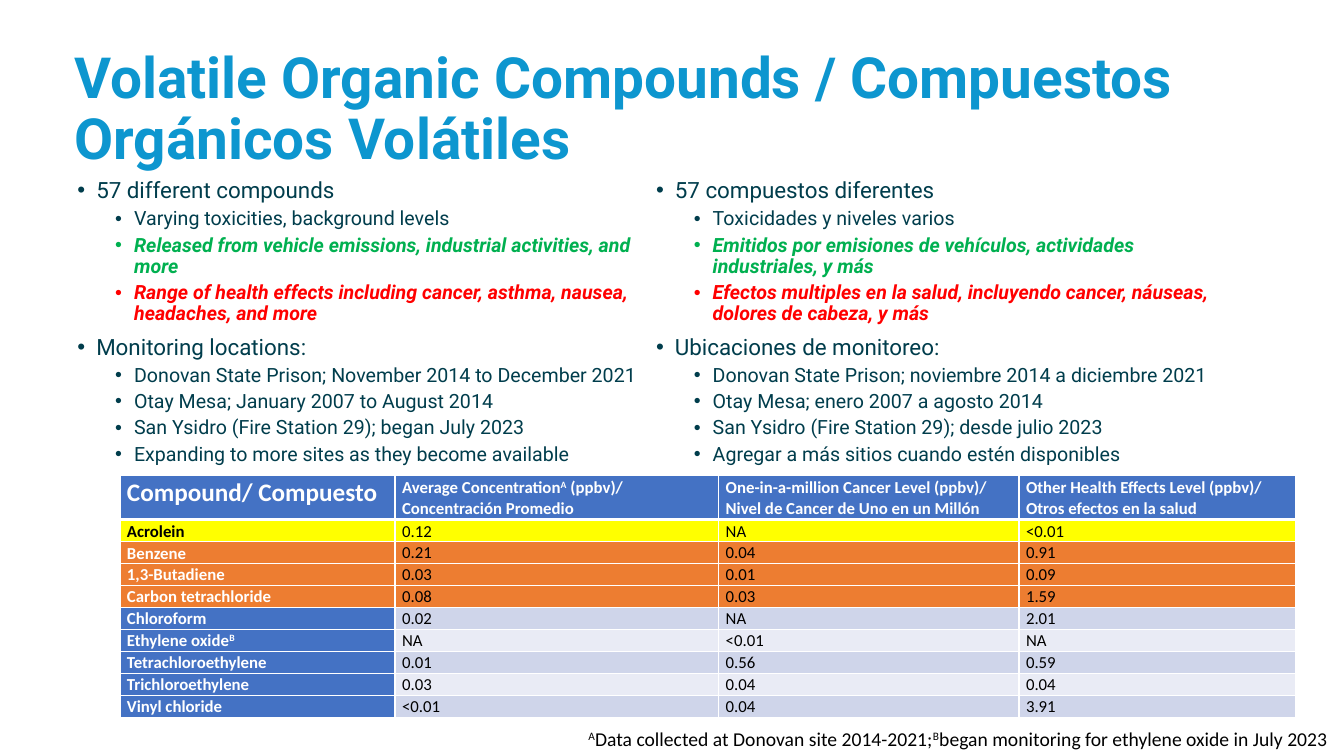
import pptx
import pptx.util
import pptx.dml.color
import pptx.enum.text
import pptx.oxml
import pptx.oxml.ns

Pt = pptx.util.Pt
ANCHOR = pptx.enum.text.MSO_ANCHOR

TITLE = "Volatile Organic Compounds / Compuestos Orgánicos Volátiles"
ENGLISH = [
    ("topic", "57 different compounds"),
    ("detail", "Varying toxicities, background levels"),
    ("source", "Released from vehicle emissions, industrial activities, and more"),
    ("health", "Range of health effects including cancer, asthma, nausea, headaches, and more"),
    ("topic", "Monitoring locations:"),
    ("detail", "Donovan State Prison; November 2014 to December 2021"),
    ("detail", "Otay Mesa; January 2007 to August 2014"),
    ("detail", "San Ysidro (Fire Station 29); began July 2023"),
    ("detail", "Expanding to more sites as they become available"),
]
SPANISH = [
    ("topic", "57 compuestos diferentes"),
    ("detail", "Toxicidades y niveles varios"),
    ("source", "Emitidos por emisiones de vehículos, actividades industriales, y más"),
    ("health", "Efectos multiples en la salud, incluyendo cancer, náuseas, dolores de cabeza, y más"),
    ("topic", "Ubicaciones de monitoreo:"),
    ("detail", "Donovan State Prison; noviembre 2014 a diciembre 2021"),
    ("detail", "Otay Mesa; enero 2007 a agosto 2014"),
    ("detail", "San Ysidro (Fire Station 29); desde julio 2023"),
    ("detail", "Agregar a más sitios cuando estén disponibles"),
]
HEADINGS = [
    ["Compound/ Compuesto"],
    ["Average Concentration^A^ (ppbv)/ Concentración Promedio"],
    ["One-in-a-million Cancer Level (ppbv)/", "Nivel de Cancer de Uno en un Millón"],
    ["Other Health Effects Level (ppbv)/", "Otros efectos en la salud"],
]
COMPOUNDS = [
    ("Acrolein", "0.12", "NA", "<0.01"),
    ("Benzene", "0.21", "0.04", "0.91"),
    ("1,3-Butadiene", "0.03", "0.01", "0.09"),
    ("Carbon tetrachloride", "0.08", "0.03", "1.59"),
    ("Chloroform", "0.02", "NA", "2.01"),
    ("Ethylene oxide^B^", "NA", "<0.01", "NA"),
    ("Tetrachloroethylene", "0.01", "0.56", "0.59"),
    ("Trichloroethylene", "0.03", "0.04", "0.04"),
    ("Vinyl chloride", "<0.01", "0.04", "3.91"),
]
HIGHLIGHTS = {"Acrolein": "yellow", "Benzene": "orange", "1,3-Butadiene": "orange",
              "Carbon tetrachloride": "orange"}
FOOTNOTE = "^A^Data collected at Donovan site 2014-2021;^B^began monitoring for ethylene oxide in July 2023"

THEME = {
    "sans": "Roboto", "table_font": "Calibri",
    "title": "0D96CF", "body": "003D4C", "green": "00B050", "red": "FF0000",
    "blue": "4472C4", "yellow": "FFFF00", "orange": "ED7D31",
    "bands": ("CFD5EA", "E9EBF5"), "white": "FFFFFF", "black": "000000",
    "title_size": 40.5, "topic_size": 16, "detail_size": 14,
    "corner_size": 18, "cell_size": 12, "note_size": 14,
}
DETAIL = dict(size=THEME["detail_size"], color=THEME["body"], indent=40.5, before=3.75)
LEVELS = {
    "topic": dict(size=THEME["topic_size"], color=THEME["body"], indent=13.5, before=7.5),
    "detail": DETAIL,
    "source": dict(DETAIL, color=THEME["green"], bold=True, italic=True),
    "health": dict(DETAIL, color=THEME["red"], bold=True, italic=True),
}
HANGING = 13.5
COLUMN_WIDTHS = (196.5, 231.2, 214.5, 197.3)
HEADER_HEIGHT, ROW_HEIGHT = 31.4, 15.7


def write(frame, text, size, color, font=THEME["sans"], bold=False, italic=False,
          spacing=None, before=0, indent=None):
    first = not frame.paragraphs[0].runs
    paragraph = frame.paragraphs[0] if first else frame.add_paragraph()
    if indent is not None:
        properties = paragraph._p.get_or_add_pPr()
        properties.set("marL", str(Pt(indent)))
        properties.set("indent", str(-Pt(HANGING)))
        properties.set("lvl", "1" if indent > HANGING else "0")
        for tag, key, value in (("buFont", "typeface", "Arial"), ("buChar", "char", "•")):
            bullet = pptx.oxml.ns.qn("a:" + tag)
            properties.append(properties.makeelement(bullet, {key: value}))
    if spacing:
        paragraph.line_spacing = spacing
    if before and not first:
        paragraph.space_before = Pt(before)
    for position, part in enumerate(text.split("^")):
        if not part:
            continue
        run = paragraph.add_run()
        run.text = part
        run.font.name = font
        run.font.size = Pt(size)
        run.font.bold = bold
        run.font.italic = italic
        run.font.color.rgb = pptx.dml.color.RGBColor.from_string(color)
        if position % 2:
            run.font._element.set("baseline", "30000")


def text_frame(slide, left, top, width, height, anchor=ANCHOR.TOP):
    frame = slide.shapes.add_textbox(Pt(left), Pt(top), Pt(width), Pt(height)).text_frame
    frame.word_wrap = True
    frame.vertical_anchor = anchor
    return frame


def border(cell, bottom):
    sides = (("lnL", 1), ("lnR", 1), ("lnT", 1), ("lnB", bottom))
    for position, (side, width) in enumerate(sides):
        line = pptx.oxml.parse_xml(
            f'<a:{side} {pptx.oxml.ns.nsdecls("a")} w="{Pt(width)}"><a:solidFill>'
            f'<a:srgbClr val="{THEME["white"]}"/></a:solidFill></a:{side}>')
        cell._tc.get_or_add_tcPr().insert(position, line)


def fill_cell(cell, lines, fill, bottom=1, anchor=ANCHOR.TOP, **style):
    cell.margin_left = cell.margin_right = Pt(5)
    cell.margin_top = cell.margin_bottom = 0
    cell.vertical_anchor = anchor
    cell.fill.solid()
    cell.fill.fore_color.rgb = pptx.dml.color.RGBColor.from_string(fill)
    border(cell, bottom)
    for line in lines:
        write(cell.text_frame, line, font=THEME["table_font"], spacing=1.07, **style)


def add_compound_table(slide):
    height = HEADER_HEIGHT + ROW_HEIGHT * len(COMPOUNDS)
    table = slide.shapes.add_table(len(COMPOUNDS) + 1, len(HEADINGS), Pt(85.7), Pt(339.8),
                                   Pt(sum(COLUMN_WIDTHS)), Pt(height)).table
    for column, width in zip(table.columns, COLUMN_WIDTHS):
        column.width = Pt(width)
    for row in table.rows:
        row.height = Pt(ROW_HEIGHT)
    table.rows[0].height = Pt(HEADER_HEIGHT)
    for column, heading in enumerate(HEADINGS):
        size = THEME["cell_size"] if column else THEME["corner_size"]
        fill_cell(table.cell(0, column), heading, THEME["blue"], bottom=3,
                  size=size, color=THEME["white"], bold=True)
    for row, compound in enumerate(COMPOUNDS):
        highlight = HIGHLIGHTS.get(compound[0])
        for column, value in enumerate(compound):
            is_name = column == 0
            plain = THEME["blue"] if is_name else THEME["bands"][row % 2]
            light_text = is_name and highlight != "yellow"
            fill_cell(table.cell(row + 1, column), [value],
                      THEME[highlight] if highlight else plain,
                      anchor=ANCHOR.MIDDLE if is_name else ANCHOR.TOP,
                      size=THEME["cell_size"], bold=is_name,
                      color=THEME["white"] if light_text else THEME["black"])


def main():
    presentation = pptx.Presentation()
    presentation.slide_width, presentation.slide_height = Pt(960), Pt(540)
    slide = presentation.slides.add_slide(presentation.slide_layouts[6])
    write(text_frame(slide, 46, 26.6, 828, 104.4, ANCHOR.MIDDLE), TITLE,
          size=THEME["title_size"], color=THEME["title"], bold=True, spacing=0.9)
    for left, bullets in ((48.2, ENGLISH), (461.5, SPANISH)):
        frame = text_frame(slide, left, 124.6, 433.4, 342.7)
        for level, text in bullets:
            write(frame, text, spacing=0.9, **LEVELS[level])
    add_compound_table(slide)
    write(text_frame(slide, 413.2, 515.5, 547, 24.5), FOOTNOTE,
          size=THEME["note_size"], color=THEME["black"], font=THEME["table_font"])
    presentation.save("out.pptx")


if __name__ == "__main__":
    main()
